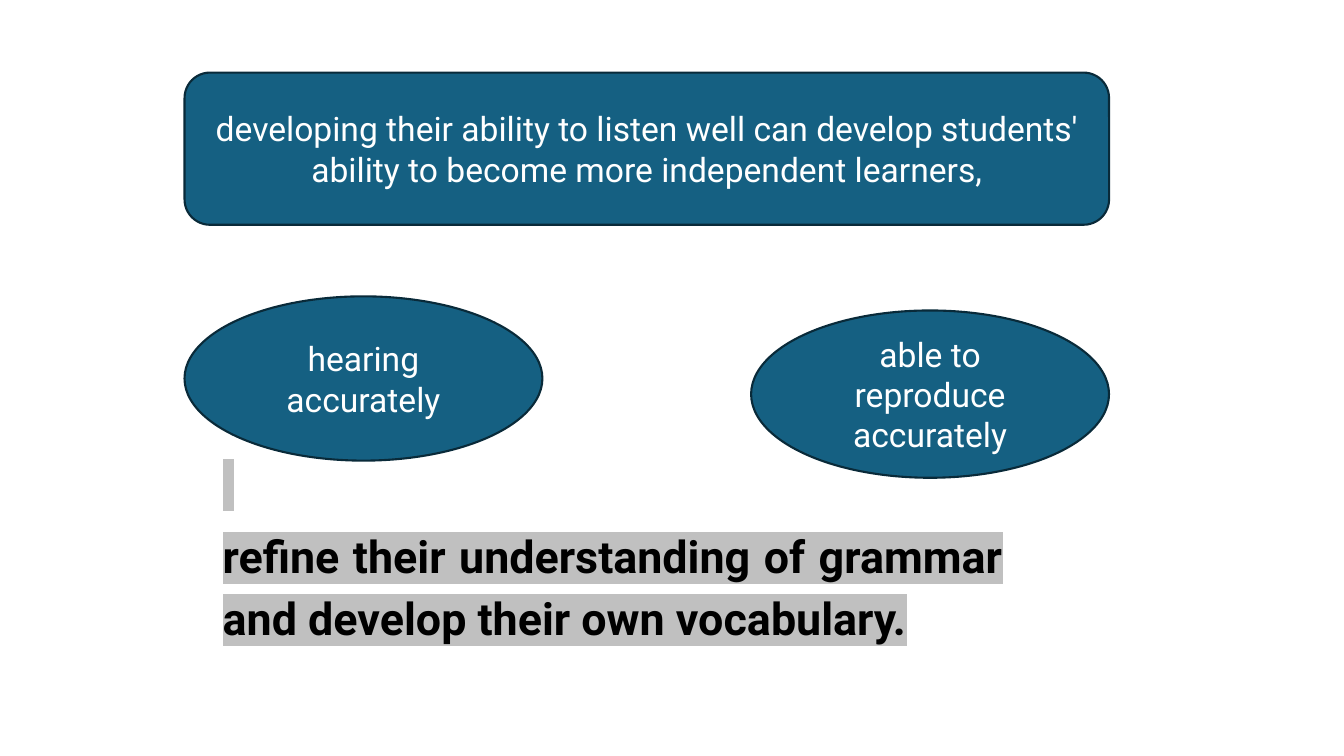
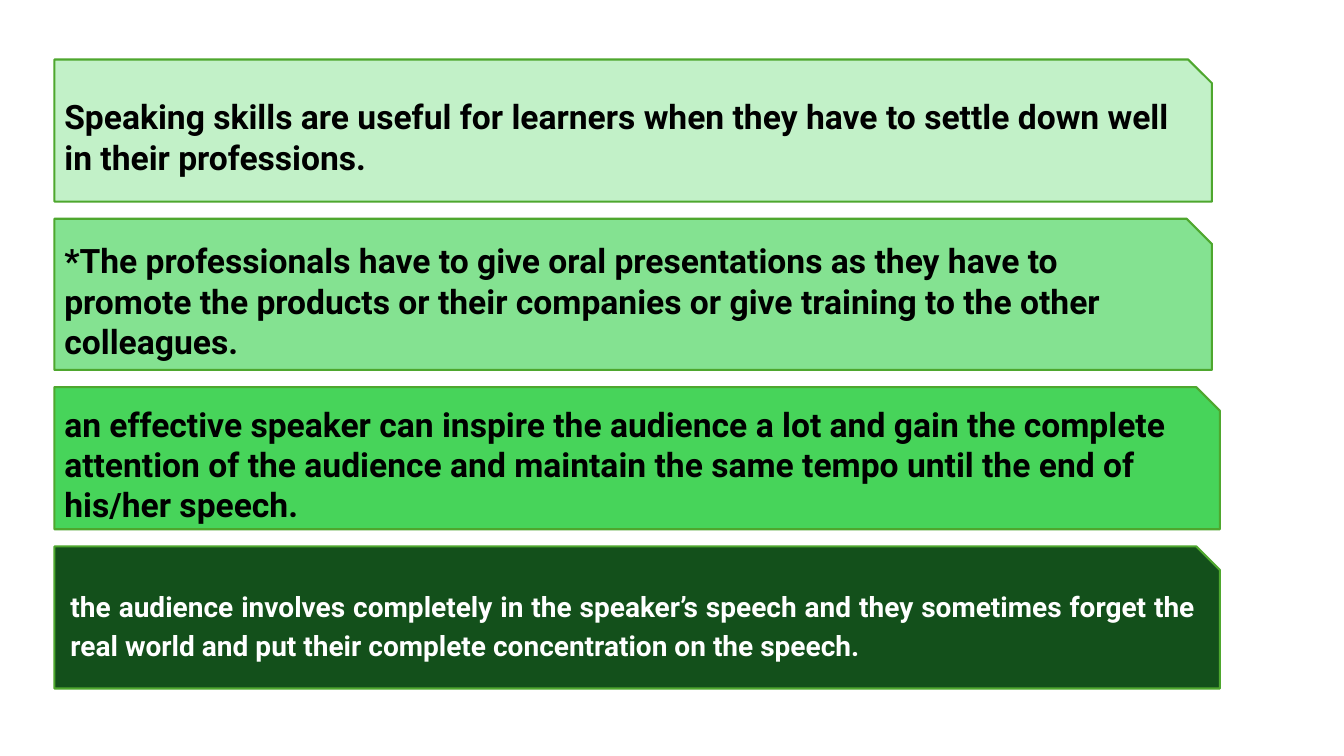
from dataclasses import dataclass

from lxml.etree import Element, SubElement
from pptx import Presentation
from pptx.dml.color import RGBColor
from pptx.enum.shapes import MSO_SHAPE as Kind
from pptx.enum.text import MSO_ANCHOR as Anchor
from pptx.enum.text import MSO_AUTO_SIZE as Fit
from pptx.enum.text import PP_ALIGN as Align
from pptx.oxml.ns import qn
from pptx.shapes.autoshape import Shape
from pptx.slide import Slide
from pptx.text.text import TextFrame
from pptx.util import Emu, Inches, Pt

WIDE, HIGH = Inches(13.33), Inches(7.5)
FONT = "Roboto"
BLACK, WHITE, GREY = "000000", "FFFFFF", "C0C0C0"
BLUE, NAVY, LEAF = "156082", "092A39", "4EA72E"

LEFT, SPAN = 13.73, 68.79
OVAL = 26.63
EDGE, TOP, GAP = 4.05, 7.87, 2.27


@dataclass(frozen=True)
class Area:
    """Place and size in percent of the slide's width and height."""

    left: float
    top: float
    width: float
    height: float

    def frame(self) -> tuple[Emu, Emu, Emu, Emu]:
        return (
            Emu(round(WIDE * self.left / 100)),
            Emu(round(HIGH * self.top / 100)),
            Emu(round(WIDE * self.width / 100)),
            Emu(round(HIGH * self.height / 100)),
        )


@dataclass(frozen=True)
class Style:
    size: int = 24
    ink: str = BLACK
    bold: bool = True
    align: Align = Align.LEFT
    loose: bool = False
    mark: str = ""


@dataclass(frozen=True)
class Bubble:
    kind: Kind
    area: Area
    text: str


@dataclass(frozen=True)
class Bar:
    width: float
    height: float
    fill: str
    text: str
    style: Style = Style()


LABEL = Style(ink=WHITE, bold=False, align=Align.CENTER)
NOTE = Style(size=32, align=Align.JUSTIFY, loose=True, mark=GREY)
CLOSE = Style(size=20, ink=WHITE, align=Align.JUSTIFY, loose=True)

BUBBLES = [
    Bubble(
        Kind.ROUNDED_RECTANGLE,
        Area(LEFT, 9.6, SPAN, 20.13),
        "developing their ability to listen well can develop students' "
        "ability to become more independent learners,",
    ),
    Bubble(Kind.OVAL, Area(LEFT, 39.2, OVAL, 21.73), "hearing accurately"),
    Bubble(
        Kind.OVAL,
        Area(LEFT + SPAN - OVAL, 41.07, OVAL, 22.13),
        "able to reproduce accurately",
    ),
]

BARS = [
    Bar(
        86.12,
        18.8,
        "C2F1C8",
        "Speaking skills are useful for learners when they have to settle "
        "down well in their professions.",
    ),
    Bar(
        86.12,
        20,
        "84E291",
        "*The professionals have to give oral presentations as they have to "
        "promote the products or their companies or give training to the "
        "other colleagues.",
    ),
    Bar(
        86.72,
        18.8,
        "47D45A",
        "an effective speaker can inspire the audience a lot and gain the "
        "complete attention of the audience and maintain the same tempo "
        "until the end of his/her speech.",
    ),
    Bar(
        86.72,
        18.8,
        "13501B",
        "the audience involves completely in the speaker’s speech and they "
        "sometimes forget the real world and put their complete "
        "concentration on the speech.",
        CLOSE,
    ),
]


def color(code: str) -> RGBColor:
    return RGBColor.from_string(code)


def write(frame: TextFrame, text: str, style: Style) -> None:
    frame.word_wrap = True
    frame.text = text
    for para in frame.paragraphs:
        para.alignment = style.align
        if style.loose:
            para.line_spacing = 1.15
            para.space_after = Pt(8)
        for run in para.runs:
            font = run.font
            font.name, font.size, font.bold = FONT, Pt(style.size), style.bold
            font.color.rgb = color(style.ink)
            if style.mark:
                mark = Element(qn("a:highlight"))
                SubElement(mark, qn("a:srgbClr"), val=style.mark)
                run._r.rPr.find(qn("a:solidFill")).addnext(mark)


def draw(
    slide: Slide, kind: Kind, area: Area, fill: str, line: str,
    text: str, style: Style,
) -> Shape:
    shape = slide.shapes.add_shape(kind, *area.frame())
    shape.shadow.inherit = False
    shape.fill.solid()
    shape.fill.fore_color.rgb = color(fill)
    shape.line.color.rgb = color(line)
    shape.line.width = Pt(1.5)
    shape.text_frame.vertical_anchor = Anchor.MIDDLE
    write(shape.text_frame, text, style)
    return shape


def listen(slide: Slide) -> None:
    note = slide.shapes.add_textbox(*Area(15.83, 58.53, 59.56, 27.2).frame())
    note.text_frame.auto_size = Fit.SHAPE_TO_FIT_TEXT
    write(
        note.text_frame,
        " \nrefine their understanding of grammar and develop their own "
        "vocabulary.",
        NOTE,
    )
    for item in BUBBLES:
        draw(slide, item.kind, item.area, BLUE, NAVY, item.text, LABEL)


def speak(slide: Slide) -> None:
    top = TOP
    for bar in BARS:
        area = Area(EDGE, top, bar.width, bar.height)
        shape = draw(
            slide, Kind.SNIP_1_RECTANGLE, area, bar.fill, LEAF,
            bar.text, bar.style,
        )
        if bar.style.loose:
            frame = shape.text_frame
            frame.vertical_anchor = Anchor.TOP
            frame.margin_left = Inches(0.16)
            frame.margin_right = Inches(0.12)
            frame.margin_top = Inches(0.26)
        top += bar.height + GAP


def main() -> None:
    deck = Presentation()
    deck.slide_width, deck.slide_height = WIDE, HIGH
    for build in (listen, speak):
        build(deck.slides.add_slide(deck.slide_layouts[6]))
    deck.save("out.pptx")


if __name__ == "__main__":
    main()
